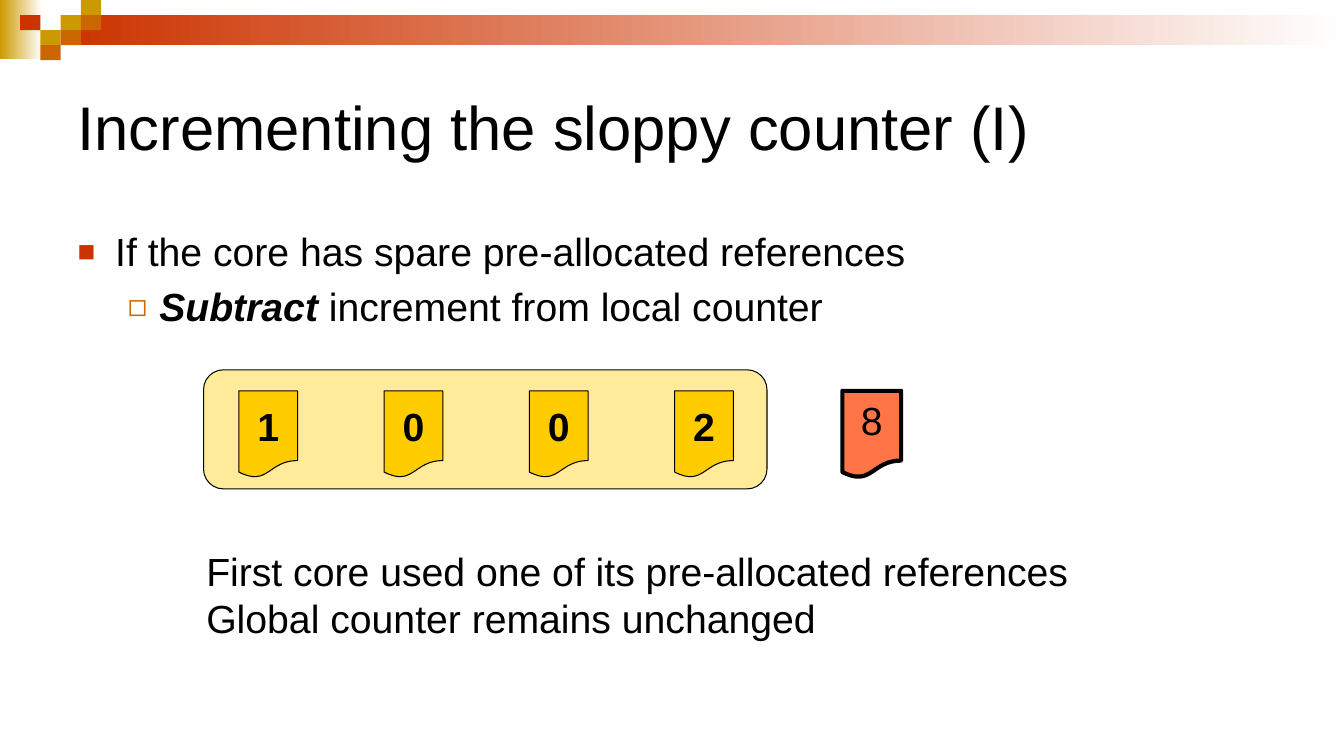
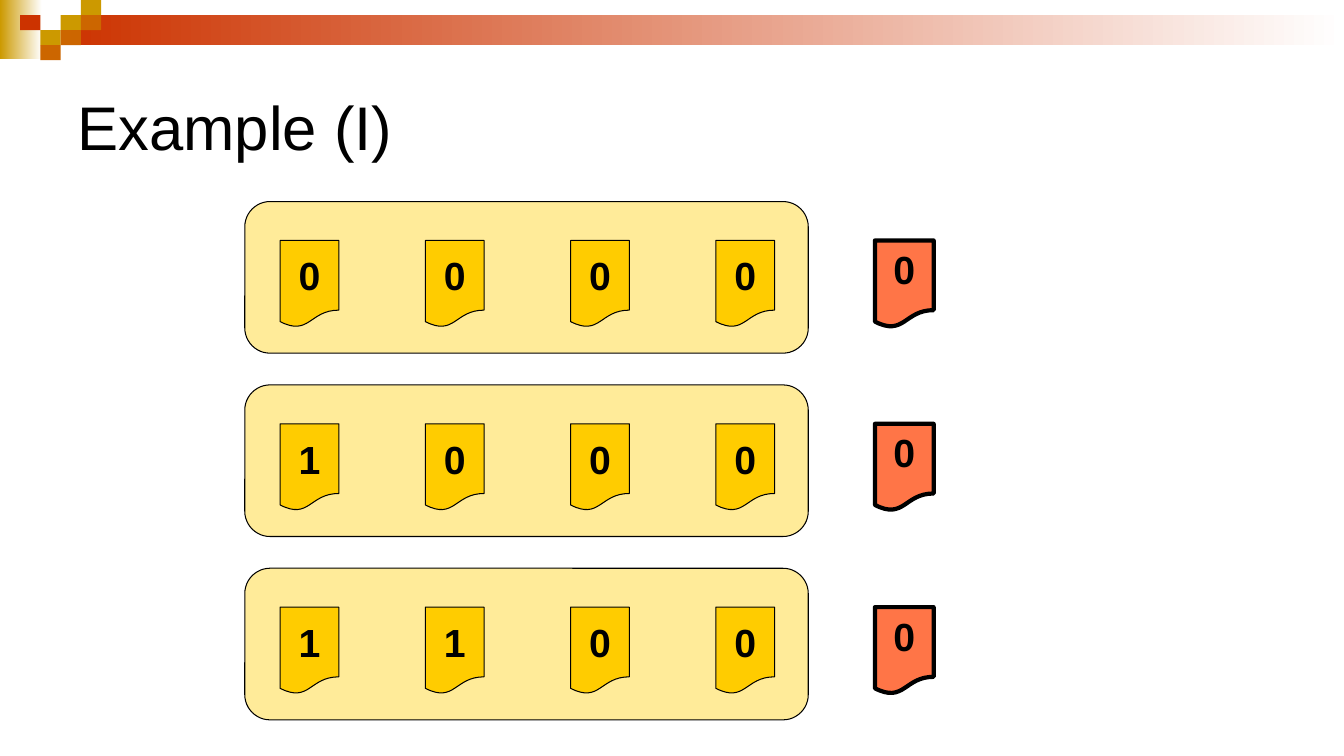
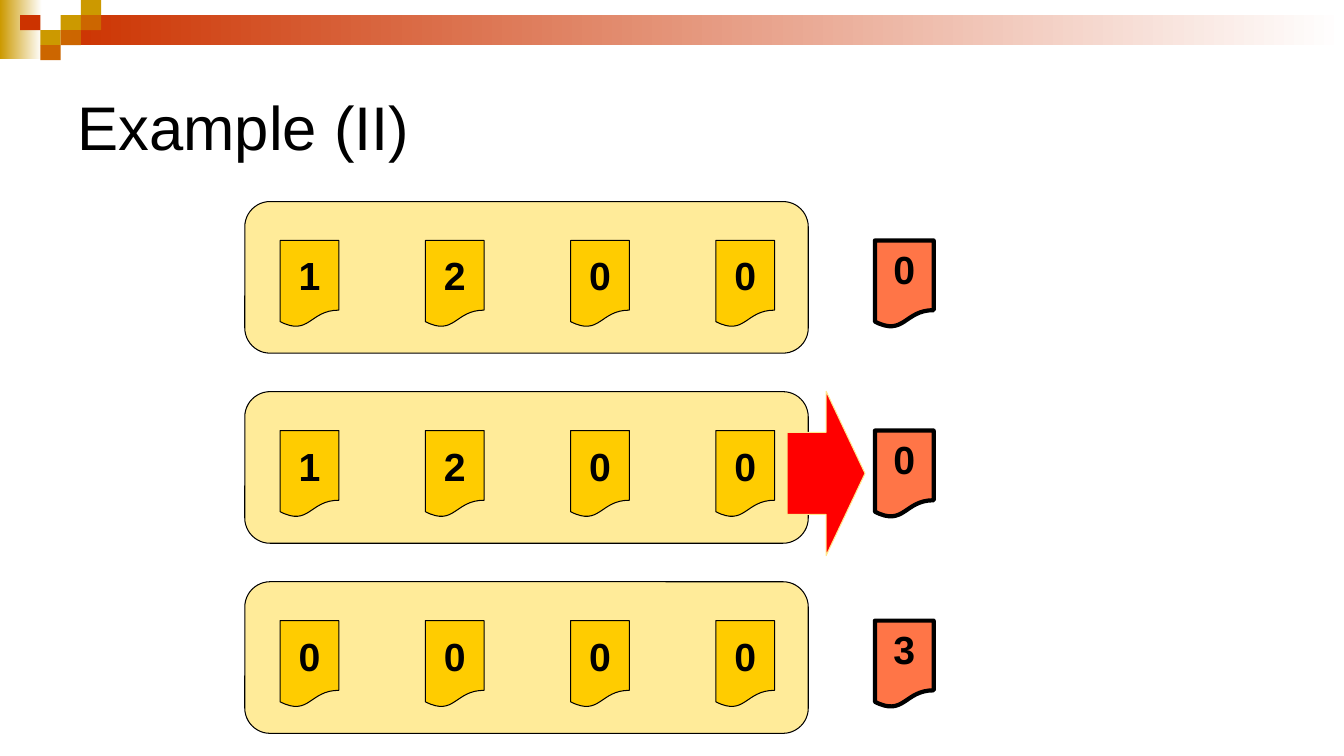
from lxml.etree import SubElement
from pptx import Presentation
from pptx.dml.color import RGBColor
from pptx.enum.shapes import MSO_SHAPE
from pptx.enum.text import MSO_ANCHOR, PP_ALIGN
from pptx.oxml.ns import qn
from pptx.util import Cm, Pt

BLACK = RGBColor(0x00, 0x00, 0x00)
WHITE = RGBColor(0xFF, 0xFF, 0xFF)
GOLD = RGBColor(0xCC, 0x99, 0x00)
RUST = RGBColor(0xCC, 0x33, 0x00)
ORANGE = RGBColor(0xCC, 0x66, 0x00)
PANEL = RGBColor(0xFF, 0xEB, 0x99)
LOCAL = RGBColor(0xFF, 0xCC, 0x00)
GLOBAL = RGBColor(0xFF, 0x75, 0x47)
RED = RGBColor(0xFF, 0x00, 0x00)
PALE = RGBColor(0xFF, 0xE8, 0x8C)
FONT = "Arial"

CARD_WIDTH, CARD_HEIGHT = 1.48, 2.19
CARD_INDENT, CARD_PITCH = 0.89, 3.66
PANEL_WIDTH = 14.2


def add_block(shapes, kind, box, fill, line=None, line_width=0.75):
    """Add a flat preset shape; box is in cm, a pair of fills makes a gradient."""
    shape = shapes.add_shape(kind, *map(Cm, box))
    shape.shadow.inherit = False
    if isinstance(fill, RGBColor):
        shape.fill.solid()
        shape.fill.fore_color.rgb = fill
    else:
        shape.fill.gradient()
        shape.fill.gradient_angle = 0
        for stop, colour in zip(shape.fill.gradient_stops, fill):
            stop.color.rgb = colour
    if line is None:
        shape.line.fill.background()
    else:
        shape.line.color.rgb = line
        shape.line.width = Pt(line_width)
    return shape


def add_card(shapes, left, top, value, fill, line_width, anchor, bold):
    """Add a counter card showing its value."""
    card = add_block(shapes, MSO_SHAPE.FLOWCHART_DOCUMENT,
                     (left, top, CARD_WIDTH, CARD_HEIGHT), fill, BLACK, line_width)
    card.text_frame.text = value
    card.text_frame.vertical_anchor = anchor
    paragraph = card.text_frame.paragraphs[0]
    paragraph.alignment = PP_ALIGN.CENTER
    for name, setting in {"name": FONT, "size": Pt(28), "bold": bold}.items():
        setattr(paragraph.font, name, setting)
    paragraph.font.color.rgb = BLACK


presentation = Presentation()
presentation.slide_width, presentation.slide_height = Cm(33.87), Cm(19.05)
master = presentation.slide_master

# Shared placeholders and text styles
boxes = {"left": 1.7, "width": 30.48}
for placeholder, vertical in zip(master.placeholders,
                                 ({"top": 1.27, "height": 3.81}, {"top": 5.61, "height": 10.8})):
    for name, length in (boxes | vertical).items():
        setattr(placeholder, name, Cm(length))

text_styles = master.element.find(qn("p:txStyles"))
title_style = text_styles.find(qn("p:titleStyle")).find(qn("a:lvl1pPr"))
title_style.set("algn", "l")
title_style.find(qn("a:defRPr")).find(qn("a:latin")).set("typeface", FONT)
body_style = text_styles.find(qn("p:bodyStyle"))
for level, margin, hanging, bullet, colour, percent in (
    (1, 0.95, 0.95, "■", RUST, 75),
    (2, 2.06, 0.79, "◻", ORANGE, 80),
):
    style = body_style.find(qn(f"a:lvl{level}pPr"))
    style.set("marL", str(Cm(margin)))
    style.set("indent", str(-Cm(hanging)))
    bullet_font = style.find(qn("a:buFont"))
    bullet_font.set("typeface", FONT)
    bullet_colour = SubElement(style, qn("a:buClr"))
    SubElement(bullet_colour, qn("a:srgbClr")).set("val", str(colour))
    bullet_size = SubElement(style, qn("a:buSzPct"))
    bullet_size.set("val", str(percent * 1000))
    bullet_font.addprevious(bullet_colour)
    bullet_font.addprevious(bullet_size)
    style.find(qn("a:buChar")).set("char", bullet)
    run_style = style.find(qn("a:defRPr"))
    run_style.set("sz", "2800")
    run_style.find(qn("a:latin")).set("typeface", FONT)

# Slides and their rows of counters: four local values, then the global one
bullet_layout, title_layout = presentation.slide_layouts[1], presentation.slide_layouts[5]
wide_rows = {"left": 6.17, "top": 5.08, "height": 3.82, "card_drop": 0.98,
             "global_offset": 15.88, "global_bold": True}
slide_plans = (
    {"title": "Incrementing the sloppy counter (I)", "layout": bullet_layout,
     "left": 5.13, "top": 9.32, "height": 3, "card_drop": 0.53,
     "global_offset": 16.1, "global_bold": False, "pitch": 0, "rows": ("10028",)},
    {"title": "Example (I)", "layout": title_layout, **wide_rows,
     "pitch": 4.62, "rows": ("00000", "10000", "11000")},
    {"title": "Example (II)", "layout": title_layout, **wide_rows,
     "pitch": 4.79, "rows": ("12000", "12000", "00003")},
)
for plan in slide_plans:
    slide = presentation.slides.add_slide(plan["layout"])
    slide.shapes.title.text = plan["title"]
    left = plan["left"]
    for row, values in enumerate(plan["rows"]):
        top = plan["top"] + row * plan["pitch"]
        card_top = top + plan["card_drop"]
        shapes = slide.shapes.add_group_shape().shapes
        add_block(shapes, MSO_SHAPE.FLOWCHART_ALTERNATE_PROCESS,
                  (left, top, PANEL_WIDTH, plan["height"]), PANEL, BLACK)
        for column, value in enumerate(values[:4]):
            add_card(shapes, left + CARD_INDENT + column * CARD_PITCH, card_top, value,
                     LOCAL, 0.75, MSO_ANCHOR.MIDDLE, True)
        add_card(shapes, left + plan["global_offset"], card_top, values[4],
                 GLOBAL, 3, MSO_ANCHOR.TOP, plan["global_bold"])

first_slide, _, last_slide = presentation.slides

# Explanation on the first slide
body = first_slide.placeholders[1].text_frame
body.text = "If the core has spare pre-allocated references"
paragraph = body.add_paragraph()
paragraph.level = 1
run = paragraph.add_run()
run.text = "Subtract"
run.font.bold = run.font.italic = True
paragraph.add_run().text = " increment from local counter"

note = first_slide.shapes.add_textbox(Cm(4.95), Cm(13.67), Cm(22.5), Cm(2.64)).text_frame
note.word_wrap = True
note.text = "First core used one of its pre-allocated references\vGlobal counter remains unchanged"
for name, setting in {"name": FONT, "size": Pt(28)}.items():
    setattr(note.paragraphs[0].font, name, setting)
note.paragraphs[0].font.color.rgb = BLACK

# Transfer to the global counter
add_block(last_slide.shapes, MSO_SHAPE.RIGHT_ARROW, (19.84, 9.86, 1.96, 4.14), RED, PALE)

# Header band and mosaic, drawn on a slide and moved behind the master placeholders
TILE_WIDTH, TILE_HEIGHT = 0.51, 0.38
header = [((0, 0, 1.06, 1.48), (GOLD, WHITE)), ((1.53, 0.38, 32.34, 0.76), (RUST, WHITE))]
for column, row, colour in ((3, 1, GOLD), (4, 0, GOLD), (4, 1, ORANGE), (2, 2, GOLD),
                            (1, 1, RUST), (3, 2, ORANGE), (2, 3, ORANGE)):
    header.append(((column * TILE_WIDTH, row * TILE_HEIGHT, TILE_WIDTH, TILE_HEIGHT), colour))
first_placeholder = master.placeholders[0].element
for box, fill in header:
    block = add_block(first_slide.shapes, MSO_SHAPE.RECTANGLE, box, fill)
    first_placeholder.addprevious(block.element)

presentation.save("out.pptx")
